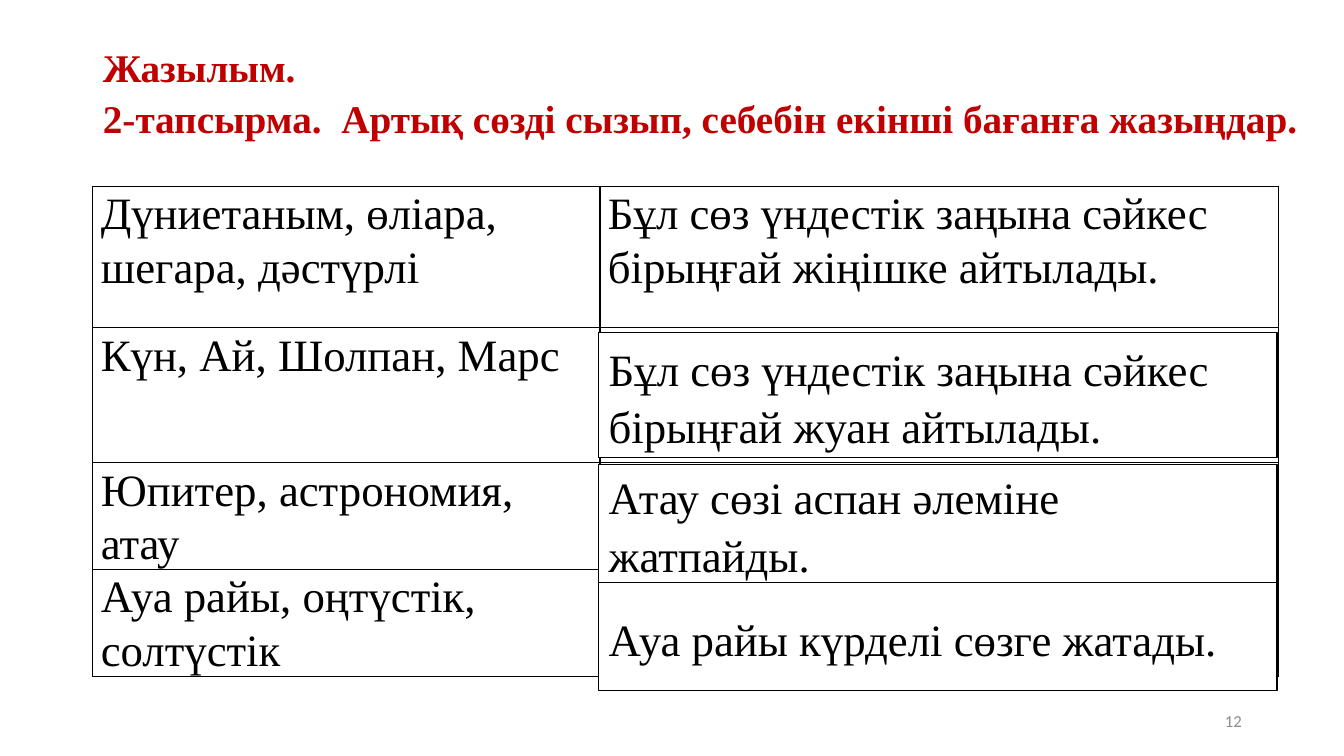
from lxml import etree
from pptx import Presentation
from pptx.dml.color import RGBColor
from pptx.enum.shapes import MSO_SHAPE
from pptx.enum.text import MSO_ANCHOR as Anchor, MSO_AUTO_SIZE as AutoSize, PP_ALIGN as Align
from pptx.oxml.ns import qn
from pptx.util import Cm, Pt

SERIF = "Times New Roman"
BLACK = "000000"
WHITE = "FFFFFF"
TABLE_LEFT, TABLE_TOP = 2.34, 4.7
COLUMN_WIDTHS = (12.78, 17.09)
ROW_HEIGHTS = (3.56, 3.4, 2.69, 2.69)
WORD_ROWS = (
    ("Дүниетаным, өліара, шегара, дәстүрлі",
     "Бұл сөз үндестік заңына сәйкес бірыңғай жіңішке айтылады."),
    ("Күн, Ай, Шолпан, Марс", ""),
    ("Юпитер, астрономия, атау", ""),
    ("Ауа райы, оңтүстік, солтүстік", ""),
)
ANSWERS = (
    (8.38, 3.15, "Бұл сөз үндестік заңына сәйкес бірыңғай жуан айтылады."),
    (11.71, 2.97, "Атау сөзі аспан әлеміне жатпайды."),
    (14.68, 2.72, "Ауа райы күрделі сөзге жатады."),
)


def color(value):
    return RGBColor.from_string(value)


def paint(fill, value):
    fill.solid()
    fill.fore_color.rgb = color(value)


def write(frame, text, size=32, font=SERIF, ink=BLACK, bold=False,
          align=Align.LEFT, spacing=1.07):
    frame.word_wrap = True
    paragraph = frame.paragraphs[0]
    paragraph.text = text
    paragraph.alignment = align
    paragraph.line_spacing = spacing
    for run in paragraph.runs:
        run.font.size = Pt(size)
        run.font.name = font
        run.font.bold = bold
        run.font.color.rgb = color(ink)


def add_title(slide, text):
    title = slide.shapes.title
    title.left, title.top, title.width, title.height = Cm(2.34), Cm(1.02), Cm(30.68), Cm(3.68)
    frame = title.text_frame
    frame.auto_size = AutoSize.NONE
    frame.vertical_anchor = Anchor.TOP
    frame.margin_top = frame.margin_right = 0
    write(frame, text, size=28, ink="C00000", bold=True)


def add_borders(cell, value):
    properties = cell._tc.get_or_add_tcPr()
    for side in ("a:lnL", "a:lnR", "a:lnT", "a:lnB"):
        line = etree.SubElement(properties, qn(side), w=str(Pt(1)))
        fill = etree.SubElement(line, qn("a:solidFill"))
        etree.SubElement(fill, qn("a:srgbClr"), val=value)


def add_word_table(slide):
    table = slide.shapes.add_table(
        len(ROW_HEIGHTS), len(COLUMN_WIDTHS), Cm(TABLE_LEFT), Cm(TABLE_TOP),
        Cm(sum(COLUMN_WIDTHS)), Cm(sum(ROW_HEIGHTS))).table
    for column, width in zip(table.columns, COLUMN_WIDTHS):
        column.width = Cm(width)
    for row, height, texts in zip(table.rows, ROW_HEIGHTS, WORD_ROWS):
        row.height = Cm(height)
        for cell, text in zip(row.cells, texts):
            cell.margin_left = cell.margin_right = Cm(0.2)
            cell.margin_top = cell.margin_bottom = 0
            add_borders(cell, BLACK)
            paint(cell.fill, WHITE)
            if text:
                write(cell.text_frame, text)


def add_answer(slide, top, height, text):
    shape = slide.shapes.add_shape(
        MSO_SHAPE.RECTANGLE, Cm(TABLE_LEFT + COLUMN_WIDTHS[0] - 0.03), Cm(top),
        Cm(COLUMN_WIDTHS[1]), Cm(height))
    shape.shadow.inherit = False
    paint(shape.fill, WHITE)
    shape.line.color.rgb = color(BLACK)
    shape.line.width = Pt(1)
    shape.text_frame.vertical_anchor = Anchor.MIDDLE
    write(shape.text_frame, text)


def add_slide_number(slide, text):
    box = slide.shapes.add_textbox(Cm(23.93), Cm(17.65), Cm(7.62), Cm(1.02))
    box.text_frame.vertical_anchor = Anchor.MIDDLE
    write(box.text_frame, text, size=12, font="Calibri", ink="8C8C8C",
          align=Align.RIGHT, spacing=1.0)


def main():
    presentation = Presentation()
    presentation.slide_width = Cm(33.87)
    presentation.slide_height = Cm(19.05)
    slide = presentation.slides.add_slide(presentation.slide_layouts[5])
    add_title(slide, "Жазылым.\v2-тапсырма.  Артық сөзді сызып, себебін екінші бағанға жазыңдар.")
    add_word_table(slide)
    add_slide_number(slide, "12")
    for top, height, text in ANSWERS:
        add_answer(slide, top, height, text)
    presentation.save("out.pptx")


if __name__ == "__main__":
    main()
